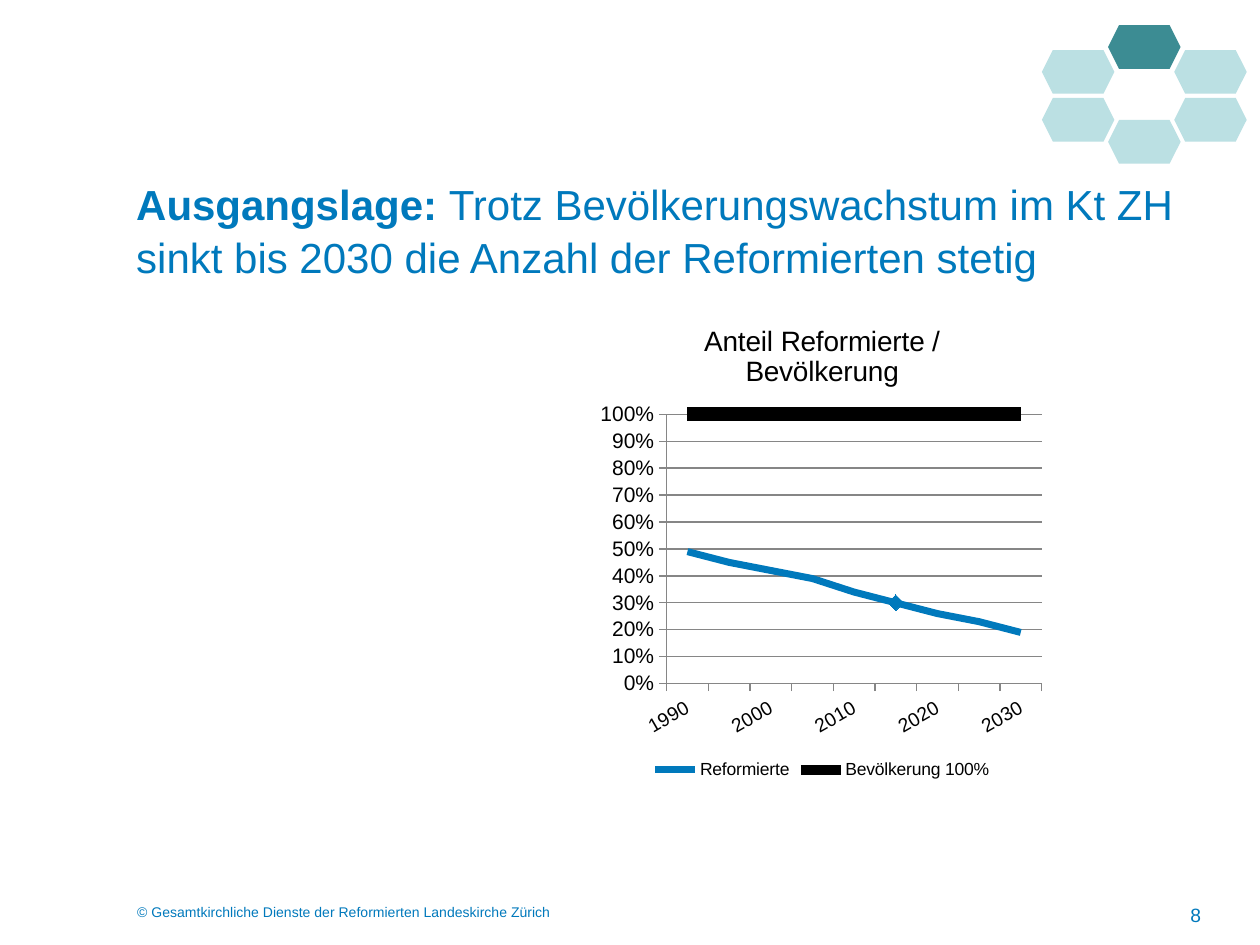
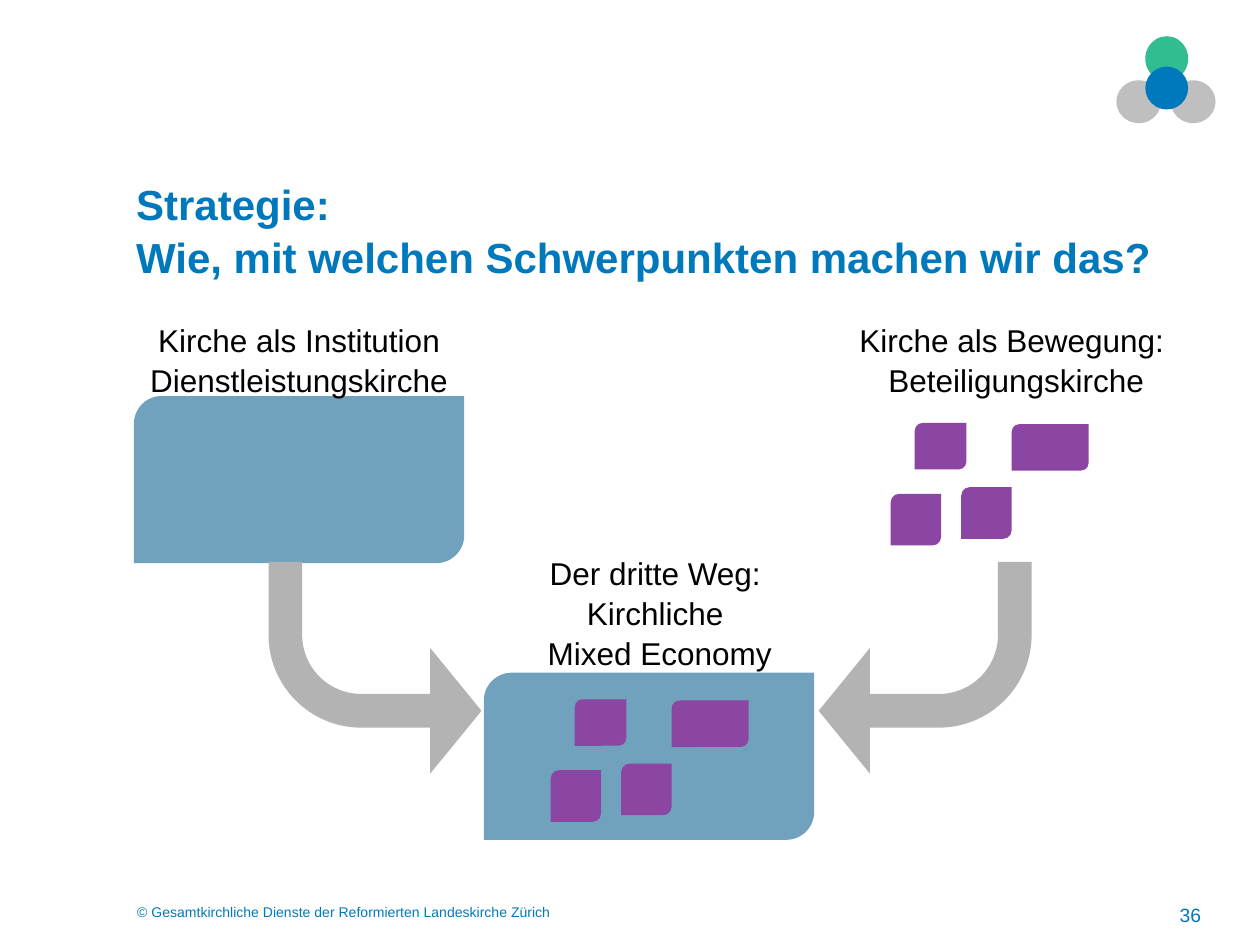
from lxml import etree
from pptx import Presentation
from pptx.chart.data import CategoryChartData
from pptx.dml.color import RGBColor
from pptx.enum.chart import XL_CHART_TYPE as ChartType, XL_LEGEND_POSITION as LegendPosition
from pptx.enum.chart import XL_MARKER_STYLE as MarkerStyle, XL_TICK_MARK as TickMark
from pptx.enum.shapes import MSO_SHAPE as Preset
from pptx.enum.text import MSO_ANCHOR as Anchor, PP_ALIGN as Align
from pptx.oxml import parse_xml
from pptx.oxml.ns import nsdecls, qn
from pptx.util import Pt

FONT = "Arial"
BLUE, BLACK, WHITE = "0079BC", "000000", "FFFFFF"
TEAL, PALE_TEAL = "3C8C93", "BBE0E3"
STEEL, PURPLE, ARROW_GREY = "71A2BD", "8B45A2", "B3B3B3"
GREEN, CIRCLE_GREY, GRID_GREY = "31BC91", "BFBFBF", "868686"
COPYRIGHT = "© Gesamtkirchliche Dienste der Reformierten Landeskirche Zürich"
MOVEMENTS = [(13.7, 0, 29.5, 26.6), (69.1, 0.7, 44, 26.6),
             (40.3, 36.7, 28.8, 29.5), (0, 40.5, 28.8, 29.5)]


def color(hex_value):
    """Turn a hex string into a colour."""
    return RGBColor.from_string(hex_value)


def style_font(font, size, hex_value=BLACK, bold=False):
    """Set typeface, size, colour and weight."""
    font.name, font.size, font.bold = FONT, Pt(size), bold
    font.color.rgb = color(hex_value)


def add_run(paragraph, text, size, hex_value=BLACK, bold=False):
    """Append one formatted run."""
    run = paragraph.add_run()
    run.text = text
    style_font(run.font, size, hex_value, bold)


def set_frame(frame, margin_x, margin_y):
    """Prepare a wrapping, top-anchored text frame."""
    frame.word_wrap, frame.vertical_anchor = True, Anchor.TOP
    frame.margin_left = frame.margin_right = Pt(margin_x)
    frame.margin_top = frame.margin_bottom = Pt(margin_y)


def add_text(slide, box, lines, size, hex_value=BLACK, align=Align.CENTER, spacing=1.0, margins=(7.2, 3.6)):
    """Add a text box with one paragraph per line."""
    frame = slide.shapes.add_textbox(*map(Pt, box)).text_frame
    set_frame(frame, *margins)
    for index, line in enumerate(lines):
        paragraph = frame.add_paragraph() if index else frame.paragraphs[0]
        paragraph.alignment, paragraph.line_spacing = align, spacing
        add_run(paragraph, line, size, hex_value)


def add_label(slide, box, lines):
    """Add a centred caption of the church models."""
    add_text(slide, box, lines, 18, spacing=1.05, margins=(6.5, 3))


def add_shape(container, preset, box, fill):
    """Add a flat shape without outline."""
    shape = container.shapes.add_shape(preset, *map(Pt, box))
    shape.shadow.inherit = False
    shape.fill.solid()
    shape.fill.fore_color.rgb = color(fill)
    shape.line.fill.background()
    return shape


def add_emblem(slide, preset, parts):
    """Group the shapes of a corner emblem."""
    group = slide.shapes.add_group_shape()
    for box, fill in parts:
        add_shape(group, preset, box, fill)


def add_movements(slide, left, top):
    """Add the cluster of four small movement blocks."""
    for x, y, width, height in MOVEMENTS:
        add_shape(slide, Preset.ROUND_2_DIAG_RECTANGLE, (left + x, top + y, width, height), PURPLE)


def add_bent_arrow(slide, left, flipped):
    """Add a curved arrow leading down to the middle block."""
    arrow = add_shape(slide, Preset.BENT_ARROW, (left, 321.1, 121.7, 121), ARROW_GREY)
    for index, value in enumerate((0.159, 0.297, 0.242, 0.438)):
        arrow.adjustments[index] = value
    arrow.rotation = 180
    if flipped:
        arrow.element.spPr.find(qn("a:xfrm")).set("flipH", "1")


def add_slide(presentation, number, title_lines):
    """Add a slide with title, copyright line and number."""
    slide = presentation.slides.add_slide(presentation.slide_layouts[5])
    title = slide.shapes.title
    title.left, title.top, title.width, title.height = map(Pt, (70.6, 97.2, 615, 73.4))
    set_frame(title.text_frame, 7.2, 3.6)
    paragraph = title.text_frame.paragraphs[0]
    paragraph.alignment, paragraph.line_spacing = Align.LEFT, 1.05
    for index, runs in enumerate(title_lines):
        if index:
            paragraph.add_line_break()
        for text, bold in runs:
            add_run(paragraph, text, 24, BLUE, bold)
    add_text(slide, (71.3, 512.6, 358.6, 27.4), [COPYRIGHT], 8, BLUE, Align.LEFT)
    add_text(slide, (525.6, 512.6, 167.8, 21.6), [str(number)], 11, BLUE, Align.RIGHT)
    return slide


def style_axis(axis, size):
    """Give an axis grey lines, outer ticks and its label size."""
    axis.major_tick_mark, axis.minor_tick_mark = TickMark.OUTSIDE, TickMark.NONE
    axis.format.line.color.rgb = color(GRID_GREY)
    axis.format.line.width = Pt(0.75)
    style_font(axis.tick_labels.font, size)


def slant_year_labels(chart):
    """Turn the category labels and show every second one."""
    axis = chart.element.find(".//" + qn("c:catAx"))
    axis.find(qn("c:txPr")).find(qn("a:bodyPr")).set("rot", "-1800000")
    skip = etree.Element(qn("c:tickLblSkip"), val="2")
    axis.find(qn("c:noMultiLvlLbl")).addprevious(skip)


def set_plot_layout(chart, x, y, width, height):
    """Fix the inner plot area as fractions of the chart."""
    area = chart.element.find(".//" + qn("c:plotArea"))
    for old in area.findall(qn("c:layout")):
        area.remove(old)
    values = {"layoutTarget": "inner", "xMode": "edge", "yMode": "edge", "x": x, "y": y, "w": width, "h": height}
    parts = "".join(f'<c:{name} val="{value}"/>' for name, value in values.items())
    area.insert(0, parse_xml(f'<c:layout {nsdecls("c")}><c:manualLayout>{parts}</c:manualLayout></c:layout>'))


def add_share_chart(slide):
    """Add the chart of the Reformed share of the population."""
    data = CategoryChartData()
    data.categories = [str(year) for year in range(1990, 2031, 5)]
    reformed = [49, 45, 42, 39, 34, 30, 26, 23, 19]
    data.add_series("Reformierte", reformed)
    data.add_series("Bevölkerung 100%", [100 - share for share in reformed])
    box = map(Pt, (339.1, 173.5, 261.4, 275))
    chart = slide.shapes.add_chart(ChartType.LINE_STACKED_100, *box, data).chart
    style_font(chart.font, 10)
    chart.has_title = True
    title = chart.chart_title.text_frame
    add_run(title.paragraphs[0], "Anteil Reformierte /", 16)
    add_run(title.add_paragraph(), "Bevölkerung", 16)
    chart.has_legend = True
    chart.legend.position, chart.legend.include_in_layout = LegendPosition.BOTTOM, False
    style_font(chart.legend.font, 10)
    chart.plots[0].vary_by_categories = False
    for series, hex_value, width in zip(chart.plots[0].series, (BLUE, BLACK), (4, 8)):
        series.smooth = False
        series.marker.style = MarkerStyle.NONE
        series.format.line.color.rgb = color(hex_value)
        series.format.line.width = Pt(width)
    point = chart.plots[0].series[0].points[5]
    point.marker.style, point.marker.size = MarkerStyle.DIAMOND, 9
    point.marker.format.fill.solid()
    point.marker.format.fill.fore_color.rgb = color(BLUE)
    point.format.line.color.rgb = color(BLUE)
    point.format.line.width = Pt(4)
    shares = chart.value_axis
    style_axis(chart.category_axis, 11)
    style_axis(shares, 12)
    slant_year_labels(chart)
    shares.minimum_scale, shares.maximum_scale, shares.major_unit = 0, 1, 0.1
    shares.tick_labels.number_format = "0%"
    shares.tick_labels.number_format_is_linked = False
    shares.has_major_gridlines = True
    shares.major_gridlines.format.line.color.rgb = color(GRID_GREY)
    set_plot_layout(chart, 0.16, 0.23, 0.82, 0.56)


def build_situation(presentation):
    """Build the slide about the starting situation."""
    slide = add_slide(presentation, 8, [[
        ("Ausgangslage: ", True),
        ("Trotz Bevölkerungswachstum im Kt ZH sinkt bis 2030 die Anzahl der Reformierten stetig", False)]])
    add_share_chart(slide)
    left, middle, right = 595.4, 633.2, 671
    places = [(middle, 14.4), (right, 28.6), (right, 56), (middle, 68.6), (left, 56), (left, 28.6)]
    add_emblem(slide, Preset.HEXAGON, [((x, y, 41.4, 25), PALE_TEAL if index else TEAL)
                                       for index, (x, y) in enumerate(places)])


def build_strategy(presentation):
    """Build the slide about the mixed economy strategy."""
    slide = add_slide(presentation, 36, [
        [("Strategie: ", True)], [("Wie, mit welchen Schwerpunkten machen wir das?", True)]])
    for left, top in ((76.5, 226.3), (276.5, 384.4)):
        add_shape(slide, Preset.ROUND_2_DIAG_RECTANGLE, (left, top, 188.8, 95.5), STEEL)
    add_label(slide, (76.5, 179.3, 188.8, 47.5), ["Kirche als Institution", "Dienstleistungskirche"])
    add_label(slide, (479.5, 179.3, 202.3, 50.4), ["Kirche als Bewegung: ", "Beteiligungskirche"])
    add_label(slide, (276.5, 312.8, 200.9, 72), ["Der dritte Weg: ", "Kirchliche ", "Mixed Economy"])
    add_bent_arrow(slide, 153.4, True)
    add_bent_arrow(slide, 467.8, False)
    add_movements(slide, 509, 241.7)
    add_movements(slide, 314.7, 399.6)
    add_emblem(slide, Preset.OVAL, [
        ((654.5, 20.7, 24.5, 25.6), GREEN), ((637.9, 45.9, 25.6, 24.5), CIRCLE_GREY),
        ((669, 45.9, 25.6, 24.5), CIRCLE_GREY), ((654.5, 38.1, 24.5, 24.5), BLUE)])


def main():
    """Build and save the presentation."""
    presentation = Presentation()
    presentation.slide_width, presentation.slide_height = Pt(720), Pt(540)
    background = presentation.slide_master.background.fill
    background.solid()
    background.fore_color.rgb = color(WHITE)
    build_situation(presentation)
    build_strategy(presentation)
    presentation.save("out.pptx")


if __name__ == "__main__":
    main()
